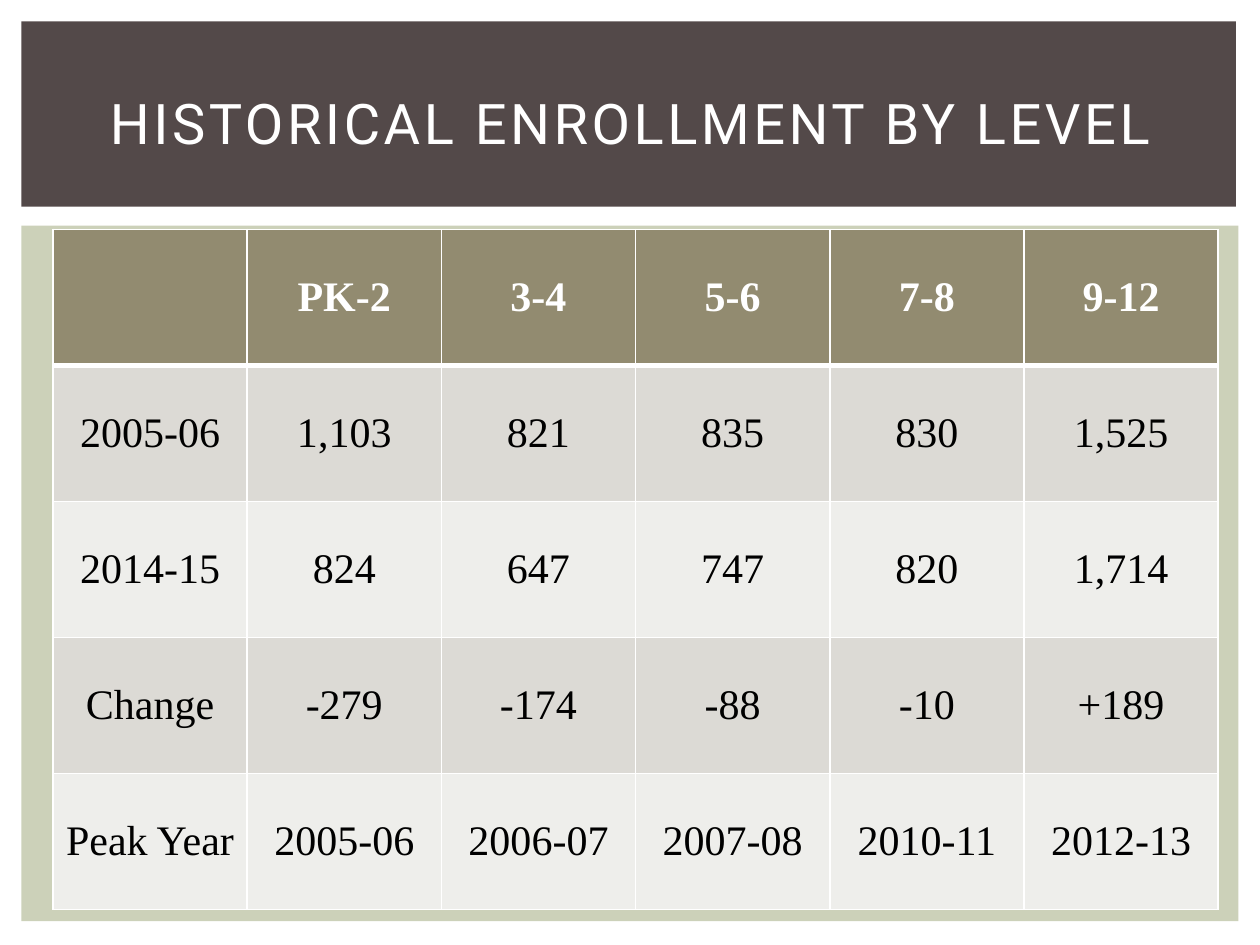
from lxml import etree
from pptx import Presentation
from pptx import util as u
from pptx.dml.color import RGBColor
from pptx.enum import shapes, text
from pptx.oxml.ns import qn

TITLE = "HISTORICAL ENROLLMENT BY LEVEL"
ENROLLMENT = [
    ["", "PK-2", "3-4", "5-6", "7-8", "9-12"],
    ["2005-06", "1,103", "821", "835", "830", "1,525"],
    ["2014-15", "824", "647", "747", "820", "1,714"],
    ["Change", "-279", "-174", "-88", "-10", "+189"],
    ["Peak Year", "2005-06", "2006-07", "2007-08", "2010-11", "2012-13"],
]
PANELS = [  # left, top, width, height, fill
    (0.17, 1.79, 9.66, 5.52, "CCD1B9"),
    (0.17, 0.17, 9.64, 1.47, "534949"),
]
TITLE_BOX = (0.42, 0.39, 9.17, 1.15)
TABLE_BOX = (0.42, 1.82, 9.25, 5.4)
HEADER_FILL, BAND_FILLS = "928B70", ("DCDAD5", "EEEEEB")
WHITE, BLACK = "FFFFFF", "000000"


def color(value):
    return RGBColor.from_string(value)


def inches(box):
    return [u.Inches(length) for length in box]


def write(frame, words, font_name, size, ink, bold=False):
    frame.vertical_anchor = text.MSO_ANCHOR.MIDDLE
    paragraph = frame.paragraphs[0]
    paragraph.alignment = text.PP_ALIGN.CENTER
    run = paragraph.add_run()
    run.text = words
    run.font.name = font_name
    run.font.size = u.Pt(size)
    run.font.bold = bold
    run.font.color.rgb = color(ink)
    return run


def add_borders(cell, widths):
    properties = cell._tc.get_or_add_tcPr()
    for side, width in widths.items():
        line = etree.SubElement(properties, qn(f"a:ln{side}"), w=str(u.Pt(width)))
        fill = etree.SubElement(line, qn("a:solidFill"))
        etree.SubElement(fill, qn("a:srgbClr"), val=WHITE)


deck = Presentation()
deck.slide_width, deck.slide_height = u.Inches(10), u.Inches(7.5)
slide = deck.slides.add_slide(deck.slide_layouts[6])

# Background panels
for *box, fill in PANELS:
    panel = slide.shapes.add_shape(shapes.MSO_SHAPE.RECTANGLE, *inches(box))
    panel.shadow.inherit = False
    panel.fill.solid()
    panel.fill.fore_color.rgb = color(fill)
    panel.line.fill.background()

# Title
title = slide.shapes.add_textbox(*inches(TITLE_BOX)).text_frame
title.word_wrap = True
heading = write(title, TITLE, "Roboto", 32, WHITE)
heading.font._element.set("spc", "200")

# Enrollment table
table = slide.shapes.add_table(
    len(ENROLLMENT), len(ENROLLMENT[0]), *inches(TABLE_BOX)).table
for r, row in enumerate(ENROLLMENT):
    header = r == 0
    for c, value in enumerate(row):
        cell = table.cell(r, c)
        add_borders(cell, {"L": 1, "R": 1, "T": 3 if r == 1 else 1,
                           "B": 3 if header else 1})
        cell.fill.solid()
        cell.fill.fore_color.rgb = color(
            HEADER_FILL if header else BAND_FILLS[(r - 1) % 2])
        cell.vertical_anchor = text.MSO_ANCHOR.MIDDLE
        if value:
            write(cell.text_frame, value, "Times New Roman", 24,
                  WHITE if header else BLACK, header)

deck.save("out.pptx")
